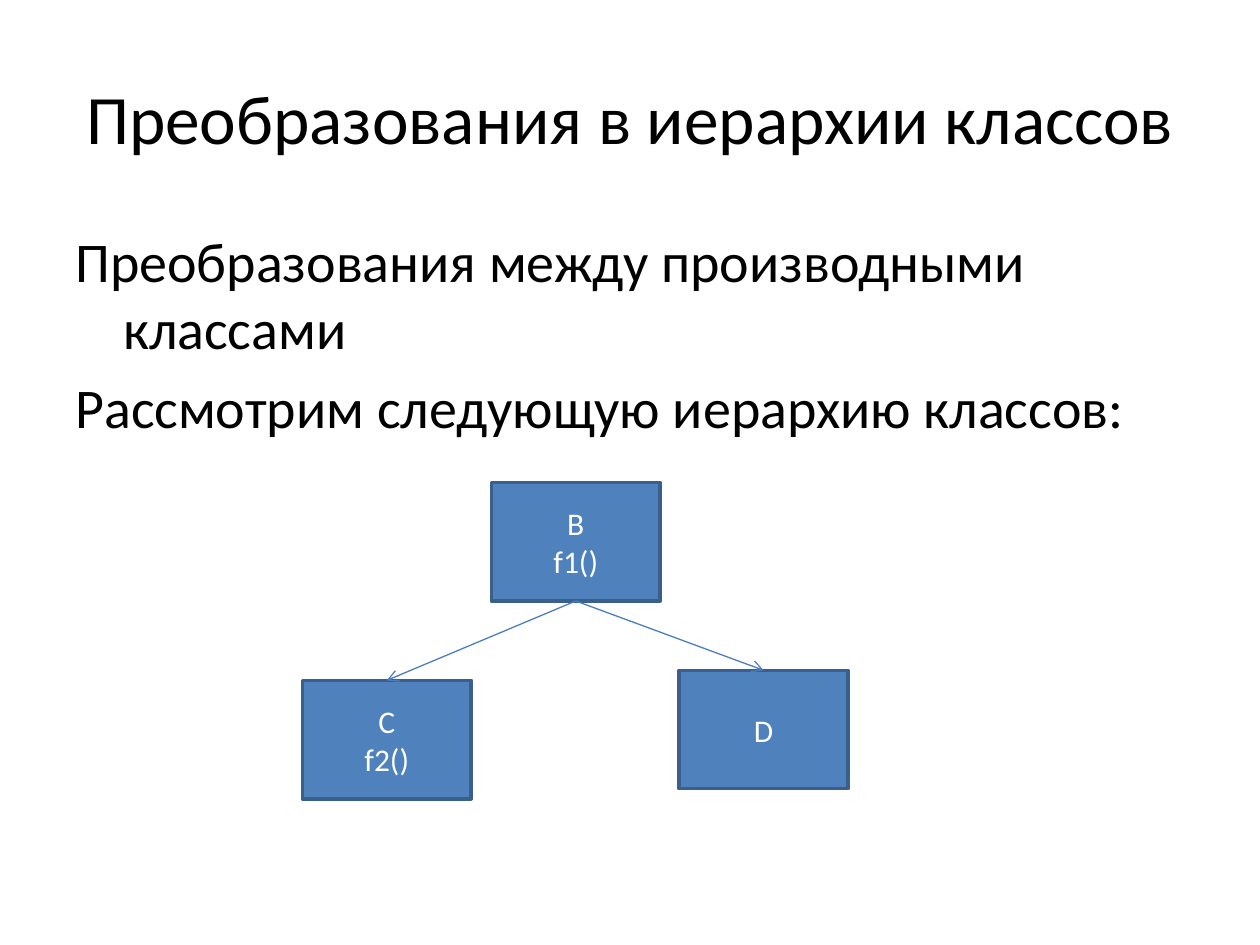
from pptx import Presentation
from pptx.dml.color import RGBColor
from pptx.enum import shapes, text
from pptx.oxml import ns
from pptx.util import Inches, Pt
from lxml import etree

BLACK = RGBColor(0x00, 0x00, 0x00)
WHITE = RGBColor(0xFF, 0xFF, 0xFF)
BLUE = RGBColor(0x4F, 0x81, 0xBD)
EDGE = RGBColor(0x3A, 0x5F, 0x8C)
ARROW = RGBColor(0x4B, 0x7E, 0xBC)
FONT = "Calibri"
WIDE, HIGH = 1.34, 0.94


def write(frame, lines, size, color, align):
    """Fill the frame with one paragraph per line and return the paragraphs."""
    frame.word_wrap = True
    for i, line in enumerate(lines):
        para = frame.paragraphs[0] if i == 0 else frame.add_paragraph()
        para.alignment = align
        run = para.add_run()
        run.text = line
        run.font.name = FONT
        run.font.size = Pt(size)
        run.font.color.rgb = color
    return frame.paragraphs


prs = Presentation()
prs.slide_width, prs.slide_height = Inches(10), Inches(7.5)
slide = prs.slides.add_slide(prs.slide_layouts[5])

title = slide.shapes.title
title.left, title.top = Inches(0.5), Inches(0.3)
title.width, title.height = Inches(9), Inches(1.25)
title.text_frame.vertical_anchor = text.MSO_ANCHOR.MIDDLE
title.text_frame.auto_size = text.MSO_AUTO_SIZE.NONE
write(title.text_frame, ["Преобразования в иерархии классов"], 39.6, BLACK,
      text.PP_ALIGN.CENTER)

body = slide.shapes.add_textbox(Inches(0.5), Inches(1.75), Inches(9), Inches(4.95))
lines = ["Преобразования между производными классами",
         "Рассмотрим следующую иерархию классов:"]
for para in write(body.text_frame, lines, 32, BLACK, text.PP_ALIGN.LEFT):
    para.space_before = Pt(6.4)
    props = para._p.get_or_add_pPr()
    props.set("marL", str(Inches(0.38)))
    props.set("indent", str(-Inches(0.38)))

boxes = {}
for lines, left, top in [(["B", "f1()"], 3.9, 3.83),
                         (["D"], 5.39, 5.32),
                         (["C", "f2()"], 2.4, 5.4)]:
    box = slide.shapes.add_shape(shapes.MSO_SHAPE.RECTANGLE, Inches(left),
                                 Inches(top), Inches(WIDE), Inches(HIGH))
    box.shadow.inherit = False
    box.fill.solid()
    box.fill.fore_color.rgb = BLUE
    box.line.color.rgb = EDGE
    box.line.width = Pt(2)
    box.text_frame.vertical_anchor = text.MSO_ANCHOR.MIDDLE
    write(box.text_frame, lines, 18, WHITE, text.PP_ALIGN.CENTER)
    boxes[lines[0]] = box

# Connection sites of a rectangle: 0 is the top middle, 2 the bottom middle
for child in "CD":
    link = slide.shapes.add_connector(shapes.MSO_CONNECTOR.STRAIGHT, 0, 0, 0, 0)
    link.begin_connect(boxes["B"], 2)
    link.end_connect(boxes[child], 0)
    link.line.color.rgb = ARROW
    link.line.width = Pt(0.75)
    etree.SubElement(link.line._get_or_add_ln(), ns.qn("a:tailEnd"), type="arrow")
    etree.SubElement(link._element.spPr, ns.qn("a:effectLst"))

prs.save("out.pptx")
